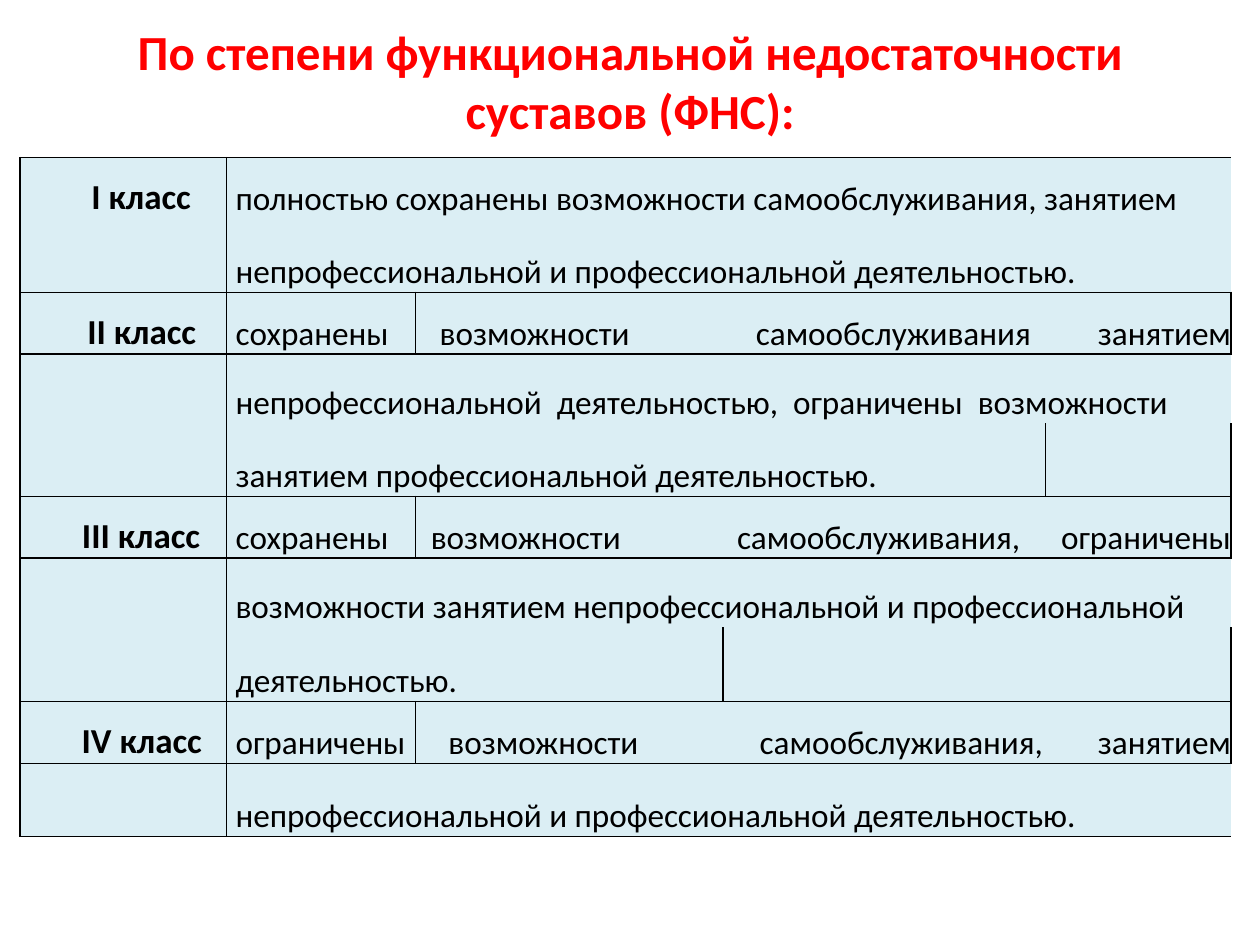
from lxml import etree
from pptx import Presentation
from pptx.dml.color import RGBColor
from pptx.enum.text import MSO_ANCHOR, PP_ALIGN
from pptx.oxml.ns import qn
from pptx.util import Inches, Pt

RED = RGBColor(0xFF, 0x00, 0x00)
BLACK = RGBColor(0x00, 0x00, 0x00)
PALE = RGBColor(0xDB, 0xEE, 0xF4)
LEFT, CENTER, RIGHT = PP_ALIGN.LEFT, PP_ALIGN.CENTER, PP_ALIGN.RIGHT
MIDDLE, BOTTOM = MSO_ANCHOR.MIDDLE, MSO_ANCHOR.BOTTOM
FONT = "Calibri"
PLAIN = "{2D5ABB26-0587-4C30-8999-92F81FD0307C}"

TITLE = "По степени функциональной недостаточности суставов (ФНС):"
WIDTHS = [1.64, 1.5, 2.44, 2.56, 1.47]
HEIGHTS = [0.49, 0.58, 0.49, 0.55, 0.58, 0.49, 0.55, 0.59, 0.49, 0.58]
PAD = 0.07
WORK = "непрофессиональной и профессиональной деятельностью."
# Each class: label, label indent, rows of (text, indent, span)
CLASSES = [
    ("I класс", 0.28, [
        [("полностью сохранены возможности самообслуживания, занятием", PAD, 4)],
        [(WORK, PAD, 4)]]),
    ("II класс", 0.29, [
        [("сохранены", PAD, 1), ("возможности", 0.19, 1),
         ("самообслуживания", 0.26, 1), ("занятием", 0, 1)],
        [("непрофессиональной  деятельностью,  ограничены  возможности", PAD, 4)],
        [("занятием профессиональной деятельностью.", PAD, 3)]]),
    ("III класс", 0.28, [
        [("сохранены", PAD, 1), ("возможности", 0.12, 1),
         ("самообслуживания,", 0.11, 1), ("ограничены", 0, 1)],
        [("возможности занятием непрофессиональной и профессиональной", PAD, 4)],
        [("деятельностью.", PAD, 2)]]),
    ("IV класс", 0.29, [
        [("ограничены", PAD, 1), ("возможности", 0.26, 1),
         ("самообслуживания,", 0.29, 1), ("занятием", 0, 1)],
        [(WORK, PAD, 4)]]),
]


def add_run(para, text, size, color, bold=False):
    """Add one formatted run to a paragraph."""
    run = para.add_run()
    run.text = text
    font = run.font
    font.name, font.size, font.bold = FONT, Pt(size), bold
    font.color.rgb = color


def add_title(slide):
    """Place and fill the title placeholder."""
    title = slide.shapes.title
    title.left, title.top = Inches(0.31), Inches(0.12)
    title.width, title.height = Inches(9.38), Inches(1.04)
    frame = title.text_frame
    frame.word_wrap = True
    frame.vertical_anchor = MIDDLE
    para = frame.paragraphs[0]
    para.alignment = CENTER
    add_run(para, TITLE, 28, RED, True)


def style_cell(cell, sides):
    """Fill a cell, clear its margins and rule the given sides."""
    cell.margin_left = cell.margin_right = 0
    cell.margin_top = cell.margin_bottom = 0
    cell.vertical_anchor = BOTTOM
    props = cell._tc.get_or_add_tcPr()
    for side in "LRTB":
        if side in sides:
            line = etree.SubElement(props, qn("a:ln" + side), w=str(Pt(1)))
            fill = etree.SubElement(line, qn("a:solidFill"))
            etree.SubElement(fill, qn("a:srgbClr"), val=str(BLACK))
    cell.fill.solid()
    cell.fill.fore_color.rgb = PALE


def write_cell(cell, text, indent, align, size, bold, tight):
    """Write one indented line of text in a cell."""
    para = cell.text_frame.paragraphs[0]
    para.alignment = align
    para._p.get_or_add_pPr().set("marL", str(Inches(indent)))
    if tight:
        para.line_spacing = Pt(13.8)
    add_run(para, text, size, BLACK, bold)


def add_class(table, top, label, indent, rows):
    """Write one class as a ruled block of rows."""
    last = len(WIDTHS) - 1
    for step, parts in enumerate(rows):
        row = top + step
        ends = "T" * (step == 0) + "B" * (step == len(rows) - 1)
        for col in range(len(WIDTHS)):
            sides = ends + "L" * (col < 2) + "R" * (col in (0, last))
            style_cell(table.cell(row, col), sides)
        col = 1
        for text, inset, span in parts:
            cell = table.cell(row, col)
            if span > 1:
                cell.merge(table.cell(row, col + span - 1))
            align = RIGHT if col == last else LEFT
            write_cell(cell, text, inset, align, 19, False, step == 0)
            col += span
    write_cell(table.cell(top, 0), label, indent, CENTER, 20, True, True)


def add_grid(slide):
    """Build the table of classes."""
    frame = slide.shapes.add_table(
        len(HEIGHTS), len(WIDTHS), Inches(0.16), Inches(1.25),
        Inches(sum(WIDTHS)), Inches(sum(HEIGHTS)))
    table = frame.table
    table.first_row = table.horz_banding = False
    table._tbl.tblPr.find(qn("a:tableStyleId")).text = PLAIN
    for col, width in zip(table.columns, WIDTHS):
        col.width = Inches(width)
    for row, height in zip(table.rows, HEIGHTS):
        row.height = Inches(height)
    top = 0
    for label, indent, rows in CLASSES:
        add_class(table, top, label, indent, rows)
        top += len(rows)


def main():
    """Build and save the slide."""
    deck = Presentation()
    deck.slide_width, deck.slide_height = Inches(10), Inches(7.5)
    slide = deck.slides.add_slide(deck.slide_layouts[5])
    add_title(slide)
    add_grid(slide)
    deck.save("out.pptx")


if __name__ == "__main__":
    main()
